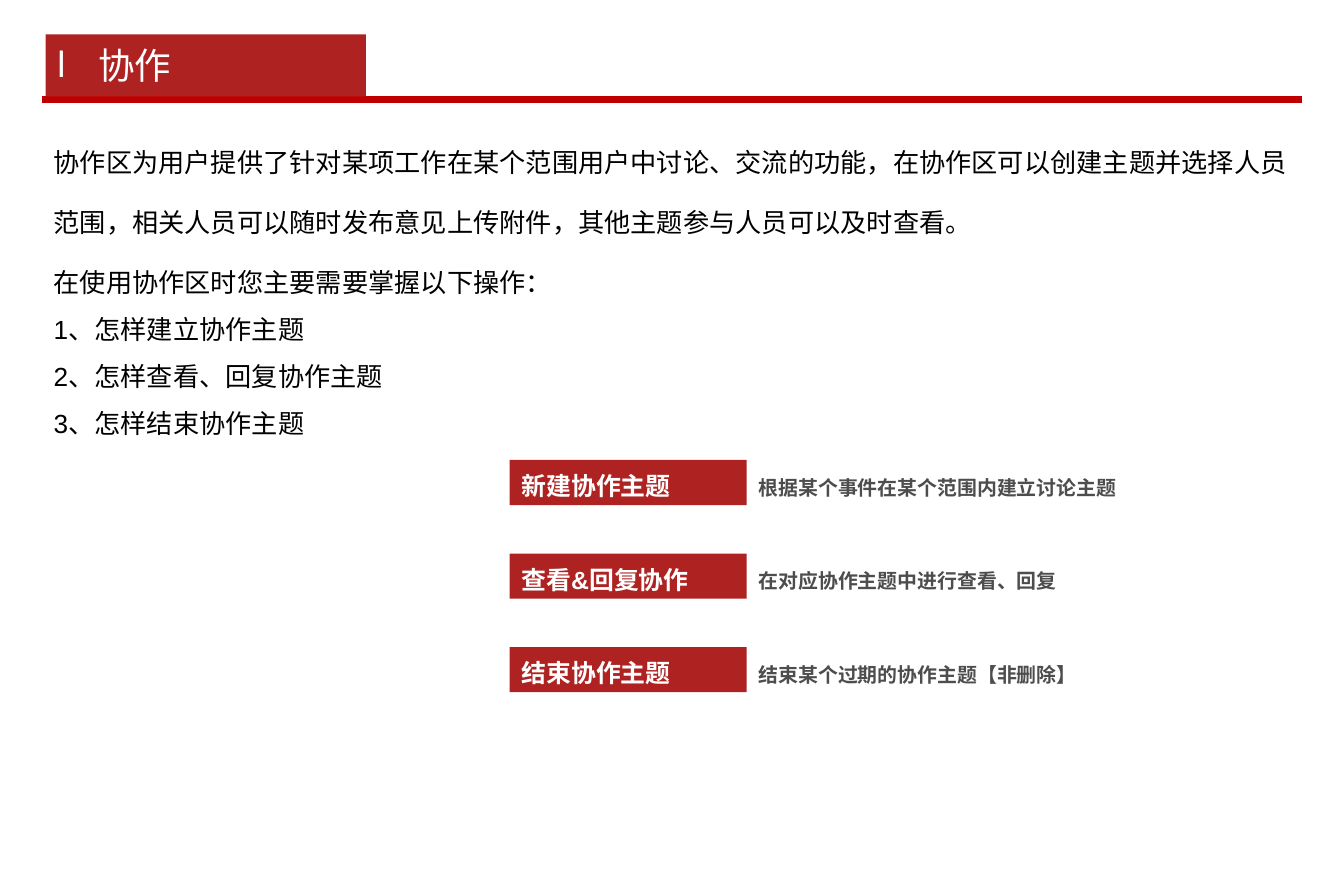
from lxml import etree
from pptx import Presentation
from pptx.dml.color import RGBColor
from pptx.enum.shapes import MSO_CONNECTOR, MSO_SHAPE
from pptx.enum.text import MSO_ANCHOR, PP_ALIGN
from pptx.oxml.ns import qn
from pptx.util import Cm, Pt

RECT, STRAIGHT = MSO_SHAPE.RECTANGLE, MSO_CONNECTOR.STRAIGHT
TOP, MIDDLE = MSO_ANCHOR.TOP, MSO_ANCHOR.MIDDLE
LEFT, JUSTIFY = PP_ALIGN.LEFT, PP_ALIGN.JUSTIFY

TITLE = "协作"
BODY = [  # text, line spacing
    ("协作区为用户提供了针对某项工作在某个范围用户中讨论、交流的功能，在协作区可以创建主题并选择人员范围，"
     "相关人员可以随时发布意见上传附件，其他主题参与人员可以及时查看。", 1.9),
    ("在使用协作区时您主要需要掌握以下操作：", 1.9),
    ("1、怎样建立协作主题", 1.5),
    ("2、怎样查看、回复协作主题", 1.5),
    ("3、怎样结束协作主题", 1.5),
]
TOPICS = [  # label, description
    ("新建协作主题", "根据某个事件在某个范围内建立讨论主题"),
    ("查看&回复协作", "在对应协作主题中进行查看、回复"),
    ("结束协作主题", "结束某个过期的协作主题【非删除】"),
]
RED, LINE_RED = "AE2222", "C00000"
FORMATS = {
    "title": {"size": Pt(22), "color": "FFFFFF", "bold": False},
    "body": {"size": Pt(15.8), "color": "000000", "bold": False},
    "label": {"size": Pt(15), "color": "FFFFFF", "bold": True},
    "description": {"size": Pt(12), "color": "4D4D4D", "bold": True},
}
MARGIN, CONTENT_W = 0.89, 26.8
LABEL_X, LABEL_Y, LABEL_W, LABEL_H = 10.84, 9.78, 5.04, 0.96
TOPIC_STEP, DESCRIPTION_DY = 1.99, 0.2


def paint(fmt, color):
    fmt.solid()
    fmt.fore_color.rgb = RGBColor.from_string(color)


def write(sp, lines, style, anchor=TOP, align=LEFT, wrap=True, bullet=None):
    """Fill a shape with (text, line spacing) paragraphs."""
    tf = sp.text_frame
    tf.word_wrap, tf.vertical_anchor = wrap, anchor
    for i, (text, spacing) in enumerate(lines):
        p = tf.add_paragraph() if i else tf.paragraphs[0]
        p.alignment, p.line_spacing = align, spacing
        if bullet:
            pPr = p._p.get_or_add_pPr()
            pPr.set("marL", str(Cm(0.87)))
            pPr.set("indent", str(-Cm(0.87)))
            etree.SubElement(pPr, qn("a:buFont")).set("typeface", "Arial")
            etree.SubElement(pPr, qn("a:buChar")).set("char", bullet)
        r = p.add_run()
        r.text, r.font.name = text, "Arial"
        for name, value in FORMATS[style].items():
            if name == "color":
                paint(r.font.fill, value)
            else:
                setattr(r.font, name, value)


def add_box(x, y, w, h):
    sp = slide.shapes.add_shape(RECT, Cm(x), Cm(y), Cm(w), Cm(h))
    sp.shadow.inherit = False
    paint(sp.fill, RED)
    sp.line.fill.background()
    return sp


def add_text(x, y, w, h):
    return slide.shapes.add_textbox(Cm(x), Cm(y), Cm(w), Cm(h))


prs = Presentation()
prs.slide_width, prs.slide_height = Cm(28.58), Cm(19.05)
slide = prs.slides.add_slide(prs.slide_layouts[6])

rule = slide.shapes.add_connector(
    STRAIGHT, Cm(MARGIN), Cm(2.12), Cm(MARGIN + CONTENT_W), Cm(2.12))
etree.SubElement(rule._element.spPr, qn("a:effectLst"))
paint(rule.line.fill, LINE_RED)
rule.line.width = Pt(4.5)

write(add_box(0.97, 0.73, 6.81, 1.32), [(TITLE, 1.0)], "title", MIDDLE, bullet="l")
write(add_text(MARGIN, 2.39, CONTENT_W, 7.11), BODY, "body")

for i, (label, description) in enumerate(TOPICS):
    y = LABEL_Y + i * TOPIC_STEP
    write(add_box(LABEL_X, y, LABEL_W, LABEL_H), [(label, 1.2)], "label", MIDDLE, JUSTIFY)
    write(add_text(LABEL_X + LABEL_W, y + DESCRIPTION_DY, 8.2, 0.76),
          [(description, 1.0)], "description", wrap=False)

prs.save("out.pptx")
